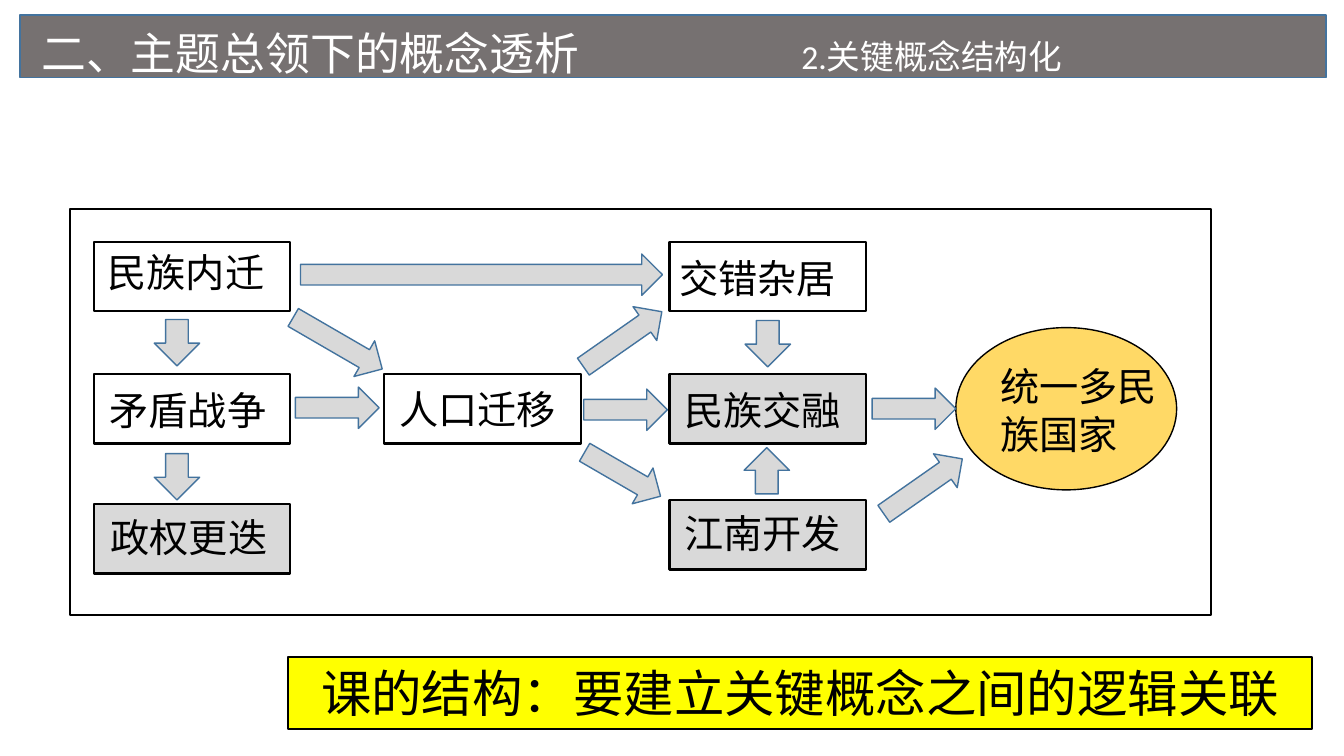
from lxml import etree
from pptx import Presentation
from pptx.dml.color import RGBColor
from pptx.enum.shapes import MSO_SHAPE
from pptx.enum.text import MSO_ANCHOR, MSO_AUTO_SIZE, PP_ALIGN
from pptx.oxml.ns import qn
from pptx.util import Inches, Pt

RECT, OVAL = MSO_SHAPE.RECTANGLE, MSO_SHAPE.OVAL
RIGHT, DOWN = MSO_SHAPE.RIGHT_ARROW, MSO_SHAPE.DOWN_ARROW
LEFT, CENTER = PP_ALIGN.LEFT, PP_ALIGN.CENTER
CJK = "Noto Sans CJK SC"
BLACK, WHITE, GREY, BLUE = "000000", "FFFFFF", "D9D9D9", "43739E"

prs = Presentation()
prs.slide_width, prs.slide_height = Inches(13.33), Inches(7.5)
s = prs.slides.add_slide(prs.slide_layouts[5])


def add_shape(kind, left, top, width, height, fill, line, weight, rotation=0):
    sp = s.shapes.add_shape(kind, Inches(left), Inches(top), Inches(width), Inches(height))
    sp.shadow.inherit = False
    sp.rotation = rotation
    if fill:
        sp.fill.solid()
        sp.fill.fore_color.rgb = RGBColor.from_string(fill)
    else:
        sp.fill.background()
    sp.line.color.rgb = RGBColor.from_string(line)
    sp.line.width = Pt(weight)
    return sp


def write(sp, text, size, color, font="Calibri", align=LEFT, anchor=MSO_ANCHOR.TOP):
    tf = sp.text_frame
    frame = {"word_wrap": True, "auto_size": MSO_AUTO_SIZE.SHAPE_TO_FIT_TEXT,
             "vertical_anchor": anchor}
    for name, value in frame.items():
        setattr(tf, name, value)
    p = tf.paragraphs[0]
    p.alignment = align
    r = p.add_run()
    r.text = text
    r.font.size = Pt(size)
    r.font.color.rgb = RGBColor.from_string(color)
    r.font.name = font
    etree.SubElement(r._r.get_or_add_rPr(), qn("a:ea"), typeface=CJK)


# Heading bar, placed behind the title
bar = add_shape(RECT, 0.2, 0.15, 12.95, 0.62, "767171", BLUE, 1)
title = s.shapes.title
title.element.addprevious(bar.element)
title.left, title.top = Inches(0.31), Inches(0.2)
title.width, title.height = Inches(6.66), Inches(0.64)
write(title, "二、主题总领下的概念透析", 32, WHITE)
subtitle = s.shapes.add_textbox(Inches(7.85), Inches(0.31), Inches(3.82), Inches(0.5))
write(subtitle, "2.关键概念结构化", 24, WHITE)

# Concept map
add_shape(RECT, 0.69, 2.07, 11.32, 4.03, None, BLACK, 1.5)
add_shape(OVAL, 9.48, 3.25, 2.19, 1.61, "FFD966", BLACK, 1)

COL1, COL2, COL3 = 0.93, 3.81, 6.64
ROW1, ROW2 = 2.4, 3.71
boxes = [
    (COL1, ROW1, None), (COL1, ROW2, None), (COL1, 5, GREY),
    (COL2, ROW2, None),
    (COL3, ROW1, None), (COL3, ROW2, GREY), (COL3, 4.96, GREY),
]
for left, top, fill in boxes:
    add_shape(RECT, left, top, 1.95, 0.69, fill, BLACK, 1.5)

labels = [
    ("民族内迁", 0.97, 2.41, 0.57),
    ("矛盾战争", 0.99, 3.78, 0.57),
    ("政权更迭", 1, 5.04, 0.57),
    ("人口迁移", 3.86, 3.77, 0.57),
    ("交错杂居", 6.64, 2.47, 0.57),
    ("民族交融", 6.69, 3.78, 0.57),
    ("江南开发", 6.69, 5, 0.57),
    ("统一多民族国家", 9.82, 3.55, 1.04),
]
for text, left, top, height in labels:
    label = s.shapes.add_textbox(Inches(left), Inches(top), Inches(1.97), Inches(height))
    write(label, text, 28, BLACK, CJK)

right_arrows = [
    (2.98, 2.52, 3.59, 0),
    (2.93, 3.84, 0.83, 0), (5.79, 3.86, 0.83, 0), (8.65, 3.85, 0.83, 0),
    (2.84, 3.2, 1.02, 30.1), (5.74, 4.5, 0.87, 30.1),
    (5.7, 3.16, 0.95, 325), (8.68, 4.62, 0.95, 325),
]
for left, top, width, rotation in right_arrows:
    add_shape(RIGHT, left, top, width, 0.41, GREY, BLUE, 1, rotation)

vertical_arrows = [(1.53, 3.17, 0), (1.53, 4.5, 0), (7.39, 3.18, 0), (7.38, 4.44, 180)]
for left, top, rotation in vertical_arrows:
    add_shape(DOWN, left, top, 0.45, 0.46, GREY, BLUE, 1, rotation)

# Conclusion
conclusion = add_shape(RECT, 2.86, 6.52, 10.15, 0.71, "FFFF00", BLACK, 1.5)
write(conclusion, "课的结构：要建立关键概念之间的逻辑关联", 36, BLACK, align=CENTER)

prs.save("out.pptx")
